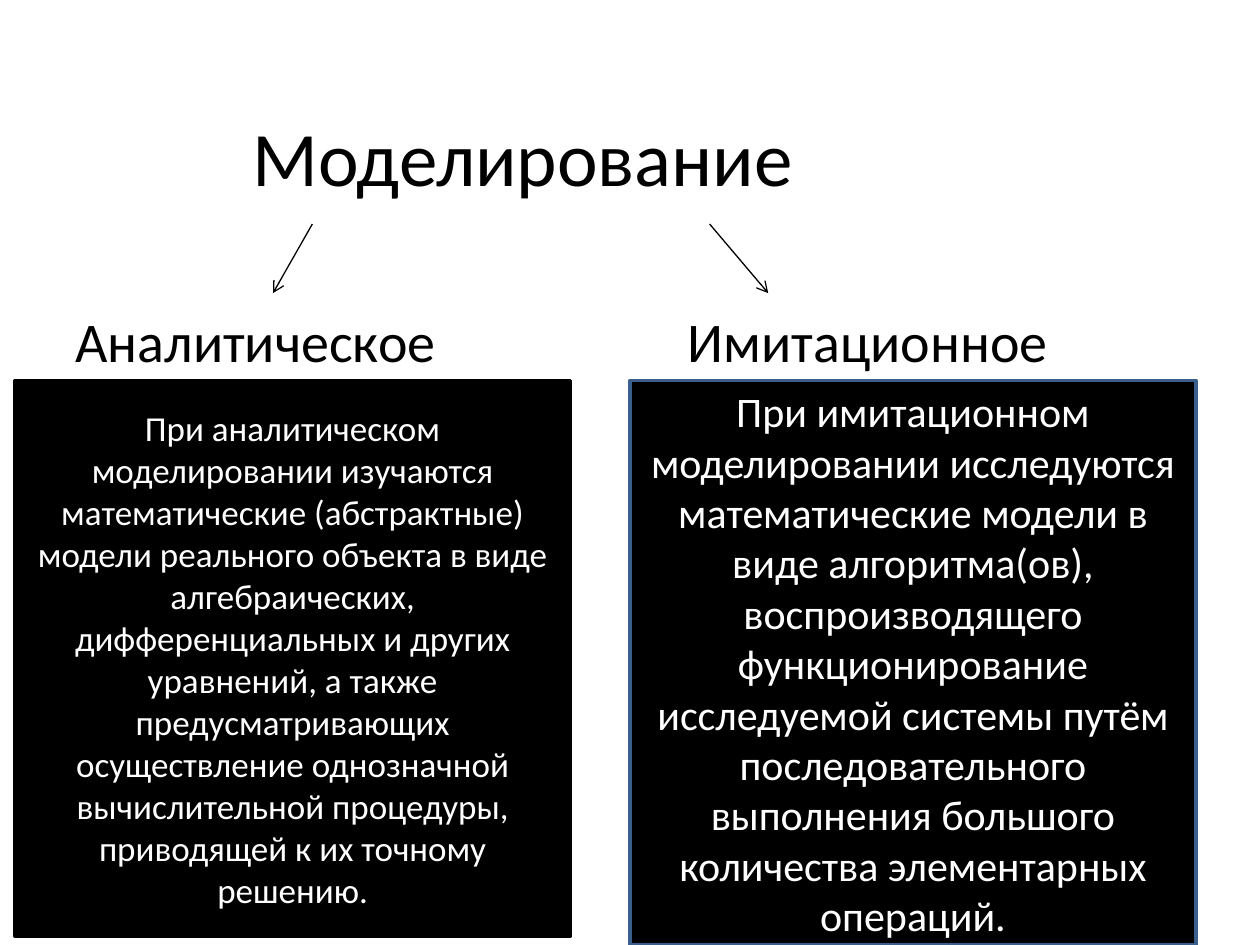
import pptx
import pptx.util
import pptx.dml.color
import pptx.enum.shapes
import pptx.enum.text
import pptx.oxml.ns
from lxml import etree

Pt = pptx.util.Pt
ALIGN = pptx.enum.text.PP_ALIGN
ANCHOR = pptx.enum.text.MSO_ANCHOR
COLORS = {"black": "000000", "white": "FFFFFF", "blue": "3A5F8C"}


def color(name):
    return pptx.dml.color.RGBColor.from_string(COLORS[name])


def write(shape, text, size, color_name, align, anchor):
    frame = shape.text_frame
    frame.text = text
    frame.word_wrap = True
    frame.auto_size = pptx.enum.text.MSO_AUTO_SIZE.NONE
    frame.vertical_anchor = anchor
    para = frame.paragraphs[0]
    para.alignment = align
    font = para.runs[0].font
    font.name = "Calibri"
    font.size = Pt(size)
    font.color.rgb = color(color_name)


deck = pptx.Presentation()
deck.slide_width, deck.slide_height = Pt(720), Pt(540)
page = deck.slides.add_slide(deck.slide_layouts[5])

title = page.shapes.title
title.left, title.top, title.width, title.height = Pt(-25.2), Pt(50), Pt(648), Pt(78)
write(title, "Моделирование", 44, "black", ALIGN.CENTER, ANCHOR.MIDDLE)

# Column headings
for heading, left in (("Аналитическое", 36), ("Имитационное", 386)):
    box = page.shapes.add_textbox(Pt(left), Pt(171.5), Pt(280), Pt(46))
    write(box, heading, 32, "black", ALIGN.LEFT, ANCHOR.TOP)

# Arrows from the title to the columns
for start, end in ((178.5, 156), (405.5, 439)):
    arrow = page.shapes.add_connector(
        pptx.enum.shapes.MSO_CONNECTOR.STRAIGHT, Pt(start), Pt(128), Pt(end), Pt(167.5))
    arrow.line.color.rgb = color("black")
    arrow.line.width = Pt(0.75)
    etree.SubElement(arrow.line._get_or_add_ln(), pptx.oxml.ns.qn("a:tailEnd"), type="arrow")
    etree.SubElement(arrow._element.spPr, pptx.oxml.ns.qn("a:effectLst"))

# Definitions: left, width, height, line color, text size, text
definitions = [
    (8.5, 317.5, 317.5, "black", 20,
     "При аналитическом моделировании изучаются математические (абстрактные) модели "
     "реального объекта в виде алгебраических, дифференциальных и других уравнений, "
     "а также предусматривающих осуществление однозначной вычислительной процедуры, "
     "приводящей к их точному решению."),
    (360, 323.5, 322.5, "blue", 24,
     "При имитационном моделировании исследуются математические модели в виде "
     "алгоритма(ов), воспроизводящего функционирование исследуемой системы путём "
     "последовательного выполнения большого количества элементарных операций."),
]
for left, width, height, line_color, size, text in definitions:
    panel = page.shapes.add_shape(
        pptx.enum.shapes.MSO_SHAPE.RECTANGLE, Pt(left), Pt(217.5), Pt(width), Pt(height))
    panel.shadow.inherit = False
    panel.fill.solid()
    panel.fill.fore_color.rgb = color("black")
    panel.line.color.rgb = color(line_color)
    panel.line.width = Pt(2)
    write(panel, text, size, "white", ALIGN.CENTER, ANCHOR.MIDDLE)

deck.save("out.pptx")
